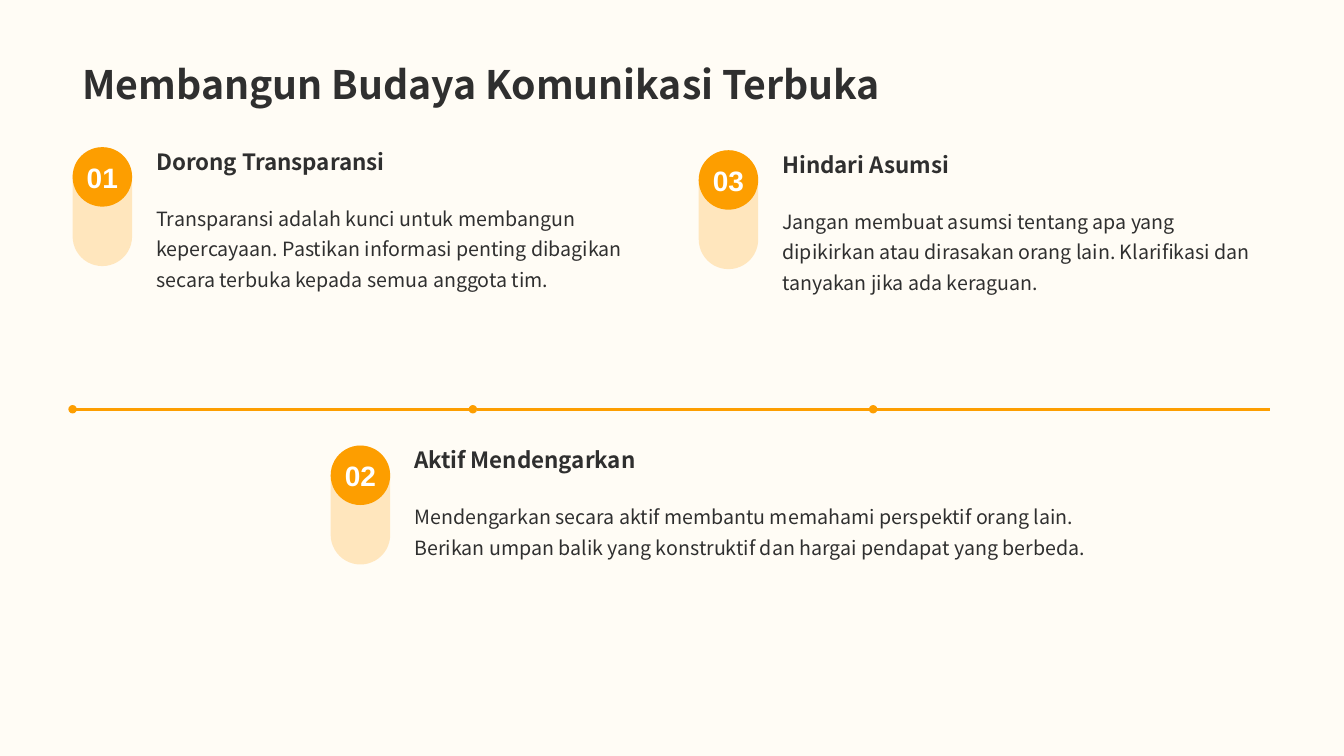
from lxml import etree
from pptx import Presentation
from pptx.dml.color import RGBColor
from pptx.enum.shapes import MSO_CONNECTOR, MSO_SHAPE
from pptx.enum.text import MSO_ANCHOR, MSO_AUTO_SIZE, PP_ALIGN
from pptx.oxml.ns import qn
from pptx.util import Inches, Pt

STRAIGHT = MSO_CONNECTOR.STRAIGHT
ROUNDED = MSO_SHAPE.ROUNDED_RECTANGLE
TOP, MIDDLE, BOTTOM = MSO_ANCHOR.TOP, MSO_ANCHOR.MIDDLE, MSO_ANCHOR.BOTTOM
FIT_SHAPE = MSO_AUTO_SIZE.SHAPE_TO_FIT_TEXT
CENTER = PP_ALIGN.CENTER

CREAM, INK, ORANGE, PEACH, WHITE = "FFFCF5", "2F2F2F", "FD9E00", "FFD898", "FFFFFF"
TEXT_FONT, NUMBER_FONT = "Noto Sans CJK SC", "Arial"
LEFT, CONTENT_WIDTH = 0.72, 11.88
BADGE = 0.59
PADDING = 0.12

# number, heading, body, left, top, text width, body height
POINTS = [
    ("01", "Dorong Transparansi",
     "Transparansi adalah kunci untuk membangun kepercayaan. Pastikan informasi "
     "penting dibagikan secara terbuka kepada semua anggota tim.",
     LEFT, 1.46, 5, 1.13),
    ("02", "Aktif Mendengarkan",
     "Mendengarkan secara aktif membantu memahami perspektif orang lain. Berikan "
     "umpan balik yang konstruktif dan hargai pendapat yang berbeda.",
     3.28, 4.42, 6.97, 0.82),
    ("03", "Hindari Asumsi",
     "Jangan membuat asumsi tentang apa yang dipikirkan atau dirasakan orang lain. "
     "Klarifikasi dan tanyakan jika ada keraguan.",
     6.93, 1.49, 4.96, 1.13),
]


def rgb(color):
    return RGBColor.from_string(color)


def set_padding(frame, horizontal, vertical):
    frame.margin_left = frame.margin_right = Inches(horizontal)
    frame.margin_top = frame.margin_bottom = Inches(vertical)


def write(frame, text, size, color=INK, font=TEXT_FONT, bold=False):
    paragraph = frame.paragraphs[0]
    paragraph.text = text
    paragraph.font.name = font
    paragraph.font.size = Pt(size)
    paragraph.font.bold = bold
    paragraph.font.color.rgb = rgb(color)
    return paragraph


def add_text(slide, box, text, size, bold=False, spacing=None):
    frame = slide.shapes.add_textbox(*map(Inches, box)).text_frame
    frame.word_wrap = True
    frame.auto_size = FIT_SHAPE
    frame.vertical_anchor = TOP
    set_padding(frame, PADDING, PADDING)
    write(frame, text, size, bold=bold).line_spacing = spacing


def add_pill(slide, left, top, height, color, alpha=None):
    pill = slide.shapes.add_shape(
        ROUNDED, Inches(left), Inches(top), Inches(BADGE), Inches(height))
    pill.adjustments[0] = 0.5
    pill.shadow.inherit = False
    pill.line.fill.background()
    pill.fill.solid()
    pill.fill.fore_color.rgb = rgb(color)
    if alpha is not None:
        fill_color = pill.fill._xPr.find(qn("a:solidFill"))[0]
        etree.SubElement(fill_color, qn("a:alpha"), val=str(alpha * 1000))
    return pill


def add_title(slide, left, top, width, height):
    frame = slide.shapes.add_textbox(
        *map(Inches, (left, top, width, height))).text_frame
    frame.word_wrap = True
    frame.vertical_anchor = BOTTOM
    set_padding(frame, 0.1, 0.05)
    title = write(frame, "Membangun Budaya Komunikasi Terbuka", 28, bold=True)
    title.line_spacing = 0.9


def add_point(slide, number, heading, body, left, top, width, body_height):
    # Numbered badge on its pale tail
    add_pill(slide, left, top, 2 * BADGE, PEACH, alpha=60)
    badge = add_pill(slide, left, top, BADGE, ORANGE).text_frame
    badge.word_wrap = False
    badge.vertical_anchor = MIDDLE
    set_padding(badge, PADDING, PADDING)
    write(badge, number, 20, WHITE, NUMBER_FONT, bold=True).alignment = CENTER

    # Heading and body
    text_left, heading_top, heading_height = left + 0.71, top - 0.11, 0.51
    add_text(slide, (text_left, heading_top, width, heading_height),
             heading, 16, bold=True)
    add_text(slide, (text_left, heading_top + heading_height, width, body_height),
             body, 14, spacing=1.3)


def add_timeline(slide, left, top, width, segments=3, gap=0.03):
    length = (width - gap * (segments - 1)) / segments
    for index in range(segments):
        start = left + index * (length + gap)
        segment = slide.shapes.add_connector(
            STRAIGHT, Inches(start), Inches(top), Inches(start + length), Inches(top))
        segment.line.color.rgb = rgb(ORANGE)
        segment.line.width = Pt(2)
        etree.SubElement(segment.line._get_or_add_ln(), qn("a:headEnd"), type="oval")
        etree.SubElement(segment._element.spPr, qn("a:effectLst"))


def main():
    prs = Presentation()
    prs.slide_width, prs.slide_height = Inches(13.33), Inches(7.5)
    slide = prs.slides.add_slide(prs.slide_layouts[6])
    slide.background.fill.solid()
    slide.background.fill.fore_color.rgb = rgb(CREAM)

    add_title(slide, LEFT, 0, CONTENT_WIDTH, 1.12)
    add_timeline(slide, LEFT, 4.06, CONTENT_WIDTH)
    for point in POINTS:
        add_point(slide, *point)
    prs.save("out.pptx")


if __name__ == "__main__":
    main()
